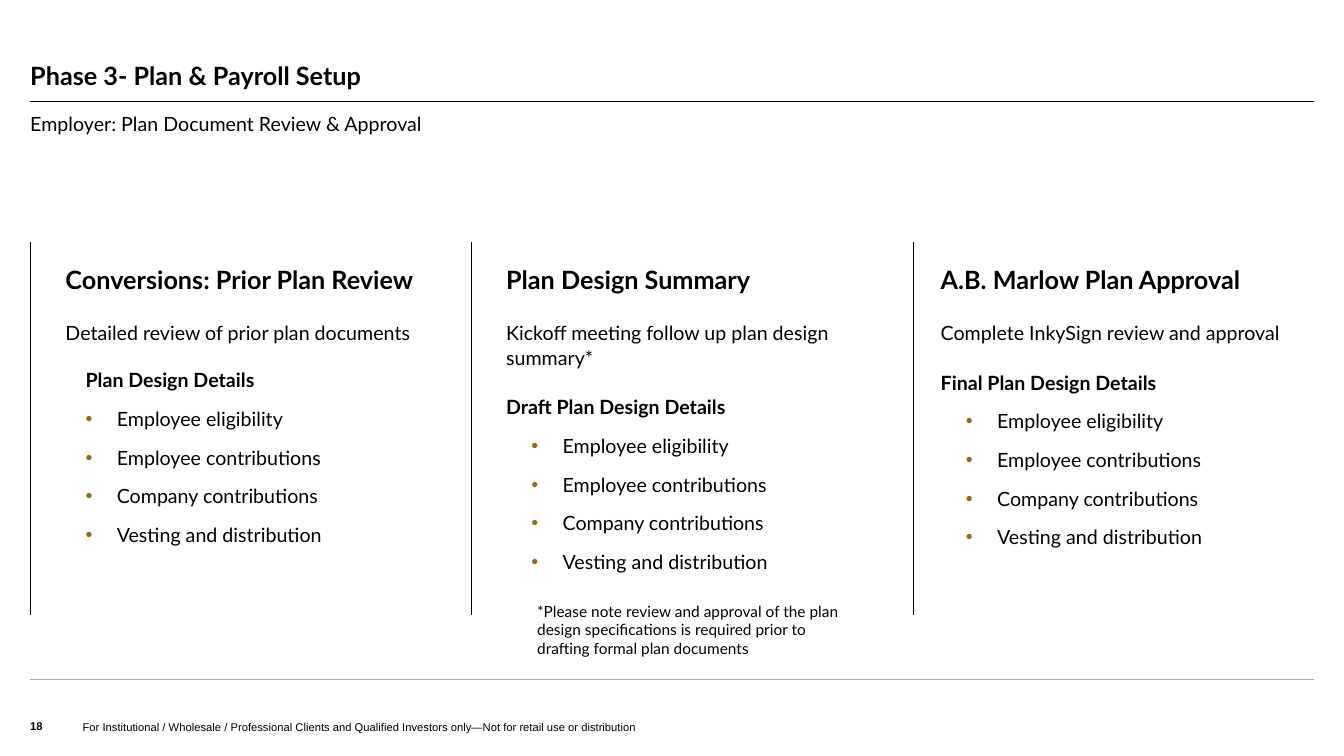
from dataclasses import dataclass

from lxml import etree
from pptx import Presentation
from pptx import util as u
from pptx.dml.color import RGBColor
from pptx.enum import shapes, text
from pptx.oxml.ns import qn


@dataclass(frozen=True)
class Theme:
    ink: str = "000000"
    accent: str = "8B6D1F"
    pale: str = "ABADAF"
    body_font: str = "Lato"
    footer_font: str = "Arial"
    heading: float = 18
    body: float = 14
    note: float = 11
    footer: float = 8
    leading: float = 1.05
    hairline: float = 0.5


theme = Theme()
WIDTH, HEIGHT = 13.33, 7.5
MARGIN = 0.3
CONTENT = WIDTH - 2 * MARGIN
COLUMN = 4.38
COLUMN_TOP, COLUMN_BOTTOM = 2.4, 6.1
HEADING_TOP = 2.61

deck = Presentation()
deck.slide_width, deck.slide_height = u.Inches(WIDTH), u.Inches(HEIGHT)
slide = deck.slides.add_slide(deck.slide_layouts[5])


def write(frame, words, size=theme.body, bold=False, font=theme.body_font,
          leading=None, before=0, after=0, left=0, hanging=0, bullet=False):
    paragraph = frame.paragraphs[0]
    if paragraph.runs:
        paragraph = frame.add_paragraph()
    paragraph.alignment = text.PP_ALIGN.LEFT
    paragraph.line_spacing = leading
    paragraph.space_before, paragraph.space_after = u.Pt(before), u.Pt(after)
    properties = paragraph._p.get_or_add_pPr()
    properties.set("marL", str(u.Inches(left)))
    properties.set("indent", str(u.Inches(-hanging)))
    if bullet:
        colour = etree.SubElement(properties, qn("a:buClr"))
        etree.SubElement(colour, qn("a:srgbClr"), val=theme.accent)
        etree.SubElement(properties, qn("a:buFont"), typeface="Arial")
        etree.SubElement(properties, qn("a:buChar"), char="•")
    run = paragraph.add_run()
    run.text = words
    run.font.name, run.font.size, run.font.bold = font, u.Pt(size), bold
    run.font.color.rgb = RGBColor.from_string(theme.ink)


def rule(x1, y1, x2, y2, colour=theme.ink):
    line = slide.shapes.add_connector(
        shapes.MSO_CONNECTOR.STRAIGHT, *map(u.Inches, (x1, y1, x2, y2)))
    line.line.color.rgb = RGBColor.from_string(colour)
    line.line.width = u.Pt(theme.hairline)
    etree.SubElement(line._element.spPr, qn("a:effectLst"))


rule(MARGIN, 1.01, MARGIN + CONTENT, 1.01)
rule(MARGIN, 6.74, MARGIN + CONTENT, 6.74, theme.pale)
for column in range(3):
    x = MARGIN + column * COLUMN
    rule(x, COLUMN_TOP, x, COLUMN_BOTTOM)

title = slide.shapes.title
title.left, title.top = u.Inches(MARGIN), u.Inches(MARGIN)
title.width, title.height = u.Inches(CONTENT), u.Inches(0.6)

TOP, MIDDLE, BOTTOM = (text.MSO_ANCHOR.TOP, text.MSO_ANCHOR.MIDDLE,
                       text.MSO_ANCHOR.BOTTOM)
places = {
    "subtitle": (MARGIN, 1.11, CONTENT, 0.49, TOP, 0),
    "conversions": (MARGIN + 0.35, HEADING_TOP, 3.96, 0.93, TOP, 0),
    "prior details": (0.5, 2.49, 4.11, 4.08, MIDDLE, 0.1),
    "summary": (MARGIN + COLUMN + 0.34, HEADING_TOP, 3.89, 3.3, TOP, 0),
    "approval": (MARGIN + 2 * COLUMN + 0.27, HEADING_TOP, 3.95, 3.06, TOP, 0),
    "note": (5.23, 5.94, 3.26, 0.61, MIDDLE, 0.1),
    "page": (MARGIN, 7.06, 0.38, 0.21, BOTTOM, 0),
    "audience": (0.82, 7.06, 10.63, 0.22, BOTTOM, 0),
}
frames = {"title": title.text_frame}
for part, (x, y, width, height, anchor, inset) in places.items():
    box = slide.shapes.add_textbox(*map(u.Inches, (x, y, width, height)))
    frames[part] = box.text_frame
    frames[part].vertical_anchor = anchor
    frames[part].margin_left = frames[part].margin_right = u.Inches(inset)
    frames[part].margin_top = frames[part].margin_bottom = u.Inches(inset / 2)
    frames[part].word_wrap = True

heading = frames["title"]
heading.vertical_anchor = BOTTOM
heading.margin_left = heading.margin_right = 0
heading.margin_top = heading.margin_bottom = 0
write(heading, "Phase 3- Plan & Payroll Setup",
      size=theme.heading, bold=True, leading=0.9)
write(frames["subtitle"], "Employer: Plan Document Review & Approval")

one_line = theme.body * 1.2 * theme.leading
in_column = dict(before=one_line)
indented = dict(left=0.5, hanging=0.25)
steps = [
    ("conversions", "Conversions: Prior Plan Review",
     "Detailed review of prior plan documents",
     "prior details", "Plan Design Details", indented),
    ("summary", "Plan Design Summary",
     "Kickoff meeting follow up plan design summary*",
     "summary", "Draft Plan Design Details", in_column),
    ("approval", "A.B. Marlow Plan Approval",
     "Complete InkySign review and approval",
     "approval", "Final Plan Design Details", in_column),
]
details = ["Employee eligibility", "Employee contributions",
           "Company contributions", "Vesting and distribution"]
for part, name, action, details_part, details_name, layout in steps:
    write(frames[part], name, size=theme.heading, bold=True,
          leading=theme.leading, after=18)
    write(frames[part], action, leading=theme.leading)
    write(frames[details_part], details_name, bold=True,
          leading=theme.leading, **layout)
    for detail in details:
        write(frames[details_part], detail, leading=theme.leading,
              before=10, left=0.56, hanging=0.31, bullet=True)

write(frames["note"],
      "*Please note review and approval of the plan design specifications "
      "is required prior to drafting formal plan documents", size=theme.note)
write(frames["page"], "18", size=theme.footer, bold=True,
      font=theme.footer_font)
write(frames["audience"],
      "For Institutional / Wholesale / Professional Clients and Qualified "
      "Investors only—Not for retail use or distribution",
      size=theme.footer, font=theme.footer_font)

deck.save("out.pptx")
